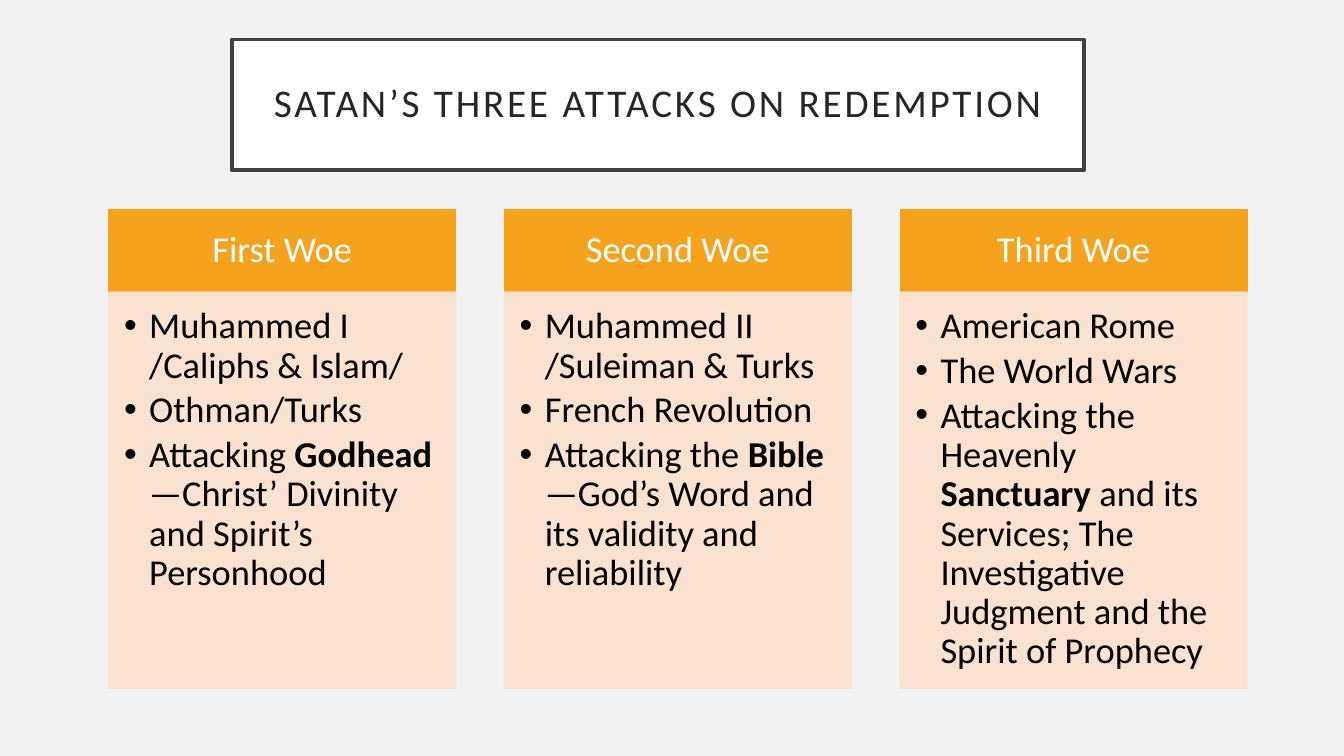
from dataclasses import dataclass

from lxml.etree import SubElement
from pptx import Presentation
from pptx.dml.color import RGBColor
from pptx.enum.shapes import MSO_SHAPE
from pptx.enum.text import MSO_ANCHOR, MSO_AUTO_SIZE, PP_ALIGN
from pptx.oxml.ns import qn
from pptx.util import Inches, Pt


@dataclass(frozen=True)
class Theme:
    font: str = "Calibri"
    background: str = "F2F2F2"
    title_fill: str = "FFFFFF"
    title_line: str = "404040"
    title_text: str = "262626"
    heading_fill: str = "F6A21D"
    heading_text: str = "FFFFFF"
    list_fill: str = "FBE0CD"
    list_text: str = "000000"
    title_size: float = 28
    card_size: float = 26
    title_border: float = 2.5
    card_border: float = 1
    line_spacing: float = 0.9
    heading_space: float = 9.1
    item_space: float = 3.9
    indent: float = 0.25


TITLE_BOX = (17.25, 5.2, 63.4, 17.3)
CARD_LEFT, CARD_WIDTH, CARD_STEP = 8.1, 25.8, 29.44
HEADING_TOP, HEADING_HEIGHT, LIST_HEIGHT = 27.7, 10.95, 52.4

WOES = [
    ("First Woe", [
        "Muhammed I /Caliphs & Islam/",
        "Othman/Turks",
        "Attacking *Godhead*—Christ’ Divinity and Spirit’s Personhood",
    ]),
    ("Second Woe", [
        "Muhammed II /Suleiman & Turks",
        "French Revolution",
        "Attacking the *Bible*—God’s Word and its validity and reliability",
    ]),
    ("Third Woe", [
        "American Rome",
        "The World Wars",
        "Attacking the Heavenly *Sanctuary* and its Services; "
        "The Investigative Judgment and the Spirit of Prophecy",
    ]),
]


class SlideBuilder:
    def __init__(self, deck, theme):
        self.deck = deck
        self.theme = theme
        self.slide = deck.slides.add_slide(deck.slide_layouts[5])
        backdrop = self.slide.background.fill
        backdrop.solid()
        backdrop.fore_color.rgb = RGBColor.from_string(theme.background)

    def place(self, box):
        left, top, width, height = (share / 100 for share in box)
        across, down = self.deck.slide_width, self.deck.slide_height
        return (round(left * across), round(top * down),
                round(width * across), round(height * down))

    def paint(self, panel, fill, line, border):
        panel.fill.solid()
        panel.fill.fore_color.rgb = RGBColor.from_string(fill)
        panel.line.color.rgb = RGBColor.from_string(line)
        panel.line.width = Pt(border)

    def frame(self, panel, anchor, insets):
        frame = panel.text_frame
        frame.word_wrap = True
        frame.auto_size = MSO_AUTO_SIZE.NONE
        frame.vertical_anchor = anchor
        (frame.margin_left, frame.margin_top,
         frame.margin_right, frame.margin_bottom) = map(Inches, insets)
        return frame

    def style(self, paragraph, size, color, align, space=0):
        paragraph.alignment = align
        paragraph.line_spacing = self.theme.line_spacing
        paragraph.space_before = Pt(0)
        paragraph.space_after = Pt(space)
        for run in paragraph.runs:
            run.font.name = self.theme.font
            run.font.size = Pt(size)
            run.font.color.rgb = RGBColor.from_string(color)

    def title(self, wording, box):
        theme = self.theme
        title = self.slide.shapes.title
        title.left, title.top, title.width, title.height = self.place(box)
        self.paint(title, theme.title_fill, theme.title_line, theme.title_border)
        frame = self.frame(title, MSO_ANCHOR.MIDDLE, (0.2, 0.2, 0.2, 0.2))
        frame.text = wording
        paragraph = frame.paragraphs[0]
        self.style(paragraph, theme.title_size, theme.title_text, PP_ALIGN.CENTER)
        paragraph.runs[0].font._element.set("spc", "200")

    def panel(self, box, fill):
        panel = self.slide.shapes.add_shape(MSO_SHAPE.RECTANGLE, *self.place(box))
        panel.shadow.inherit = False
        self.paint(panel, fill, fill, self.theme.card_border)
        return panel

    def heading(self, wording, box):
        theme = self.theme
        panel = self.panel(box, theme.heading_fill)
        frame = self.frame(panel, MSO_ANCHOR.MIDDLE, (0.2, 0.12, 0.2, 0.12))
        frame.text = wording
        self.style(frame.paragraphs[0], theme.card_size, theme.heading_text,
                   PP_ALIGN.CENTER, theme.heading_space)

    def bullets(self, items, box):
        theme = self.theme
        panel = self.panel(box, theme.list_fill)
        for color in panel._element.spPr.iter(qn("a:srgbClr")):
            SubElement(color, qn("a:alpha"), val="90000")
        frame = self.frame(panel, MSO_ANCHOR.TOP, (0.15, 0.15, 0.2, 0.23))
        for index, item in enumerate(items):
            paragraph = frame.add_paragraph() if index else frame.paragraphs[0]
            for part, wording in enumerate(item.split("*")):
                run = paragraph.add_run()
                run.text = wording
                run.font.bold = part % 2 == 1
            paragraph.level = 1
            self.style(paragraph, theme.card_size, theme.list_text,
                       PP_ALIGN.LEFT, theme.item_space)
            properties = paragraph._p.get_or_add_pPr()
            properties.set("marL", str(Inches(theme.indent)))
            properties.set("indent", str(-Inches(theme.indent)))
            SubElement(properties, qn("a:buFont"), typeface="Arial")
            SubElement(properties, qn("a:buChar"), char="•")


def main():
    deck = Presentation()
    deck.slide_width, deck.slide_height = Inches(13.33), Inches(7.5)
    builder = SlideBuilder(deck, Theme())
    builder.title("SATAN’S THREE ATTACKS ON REDEMPTION", TITLE_BOX)
    for column, (woe, attacks) in enumerate(WOES):
        left = CARD_LEFT + column * CARD_STEP
        builder.heading(woe, (left, HEADING_TOP, CARD_WIDTH, HEADING_HEIGHT))
        builder.bullets(attacks, (left, HEADING_TOP + HEADING_HEIGHT,
                                  CARD_WIDTH, LIST_HEIGHT))
    deck.save("out.pptx")


if __name__ == "__main__":
    main()
